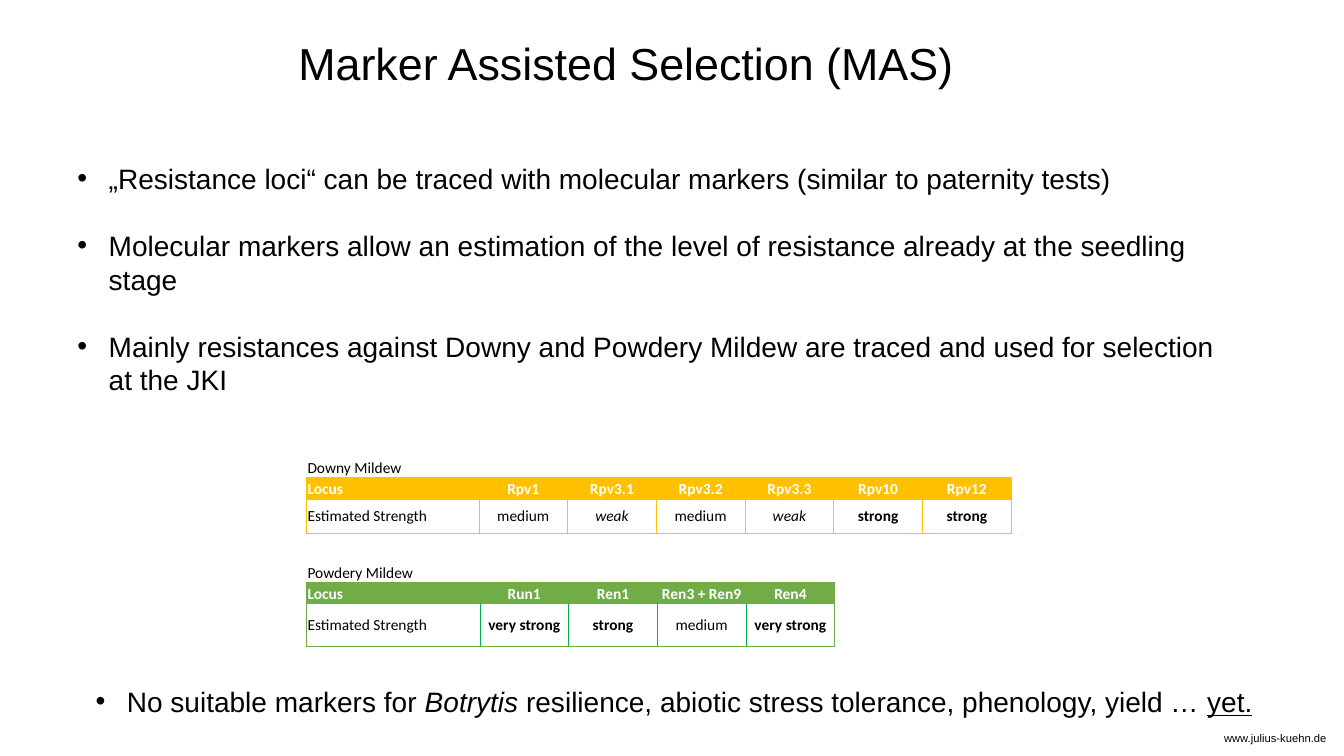
from lxml import etree
from pptx import Presentation
from pptx.dml.color import RGBColor
from pptx.enum.text import MSO_ANCHOR, PP_ALIGN
from pptx.oxml.ns import qn
from pptx.util import Inches, Pt

LEFT, CENTER = PP_ALIGN.LEFT, PP_ALIGN.CENTER
MIDDLE, BOTTOM = MSO_ANCHOR.MIDDLE, MSO_ANCHOR.BOTTOM

BLACK = RGBColor(0x00, 0x00, 0x00)
WHITE = RGBColor(0xFF, 0xFF, 0xFF)
AMBER = RGBColor(0xFF, 0xC0, 0x00)
GREEN = RGBColor(0x70, 0xAD, 0x47)
DEEP_GREEN = RGBColor(0x00, 0xB0, 0x50)

BULLET_INDENT = Inches(0.31)
LOCUS_WIDTH = 0.88
HEADER_HEIGHT = 0.21

LOCI_POINTS = [
    "„Resistance loci“ can be traced with molecular markers (similar to paternity tests)",
    "Molecular markers allow an estimation of the level of resistance already at the seedling stage",
    "Mainly resistances against Downy and Powdery Mildew are traced and used for selection at the JKI",
]
DOWNY = {"Rpv1": "medium", "Rpv3.1": "weak", "Rpv3.2": "medium",
         "Rpv3.3": "weak", "Rpv10": "strong", "Rpv12": "strong"}
POWDERY = {"Run1": "very strong", "Ren1": "strong",
           "Ren3 + Ren9": "medium", "Ren4": "very strong"}


def add_text(paragraph, text, size=20, font="Arial", color=BLACK, align=LEFT,
             bold=False, italic=False, underline=False):
    paragraph.alignment = align
    run = paragraph.add_run()
    run.text = text
    run.font.size = Pt(size)
    run.font.name = font
    run.font.color.rgb = color
    run.font.bold = bold
    run.font.italic = italic
    run.font.underline = underline


def add_box(slide, left, top, width, height):
    box = slide.shapes.add_textbox(Inches(left), Inches(top), Inches(width), Inches(height))
    box.text_frame.word_wrap = True
    return box.text_frame


def make_bullet(paragraph):
    props = paragraph._p.get_or_add_pPr()
    props.set("marL", str(BULLET_INDENT))
    props.set("indent", str(-BULLET_INDENT))
    etree.SubElement(props, qn("a:buFont")).set("typeface", "Arial")
    etree.SubElement(props, qn("a:buChar")).set("char", "•")


def set_borders(cell, **sides):
    """Draw the given sides in their colour and hide the others."""
    props = cell._tc.get_or_add_tcPr()
    for side in ("L", "R", "T", "B"):
        line = etree.SubElement(props, qn(f"a:ln{side}"), w=str(Pt(0.5)))
        if side in sides:
            fill = etree.SubElement(line, qn("a:solidFill"))
            etree.SubElement(fill, qn("a:srgbClr"), val=str(sides[side]))
        else:
            etree.SubElement(line, qn("a:noFill"))


def add_title(slide, left, top, width, height):
    title = add_box(slide, left, top, width, height)
    add_text(title.paragraphs[0], "Marker Assisted Selection (MAS)", size=32, align=CENTER)


def add_loci_points(slide, left, top, width, height):
    frame = add_box(slide, left, top, width, height)
    for i, point in enumerate(LOCI_POINTS):
        paragraph = frame.add_paragraph() if i else frame.paragraphs[0]
        make_bullet(paragraph)
        if i:
            paragraph.space_before = Pt(24)
        add_text(paragraph, point)


def add_resistance_table(slide, left, top, label_width, strength_height,
                         mildew, strengths, accent, divider):
    columns = len(strengths) + 1
    widths = [label_width] + [LOCUS_WIDTH] * len(strengths)
    heights = [HEADER_HEIGHT, HEADER_HEIGHT, strength_height]
    table = slide.shapes.add_table(3, columns, Inches(left), Inches(top),
                                   Inches(sum(widths)), Inches(sum(heights))).table
    table.first_row = table.horz_banding = False
    for column, width in zip(table.columns, widths):
        column.width = Inches(width)
    for row, height in zip(table.rows, heights):
        row.height = Inches(height)

    rows = [[mildew] + [""] * len(strengths),
            ["Locus", *strengths],
            ["Estimated Strength", *strengths.values()]]
    for r, texts in enumerate(rows):
        for c, text in enumerate(texts):
            cell = table.cell(r, c)
            cell.margin_left = cell.margin_right = cell.margin_top = Inches(0.01)
            cell.margin_bottom = 0
            cell.vertical_anchor = MIDDLE if r == 2 else BOTTOM
            if r == 0:
                set_borders(cell, B=accent)
            else:
                inner = divider if r == 2 else accent
                set_borders(cell, T=accent, B=accent,
                            L=inner if c else accent,
                            R=inner if c < columns - 1 else accent)
            if r == 1:
                cell.fill.solid()
                cell.fill.fore_color.rgb = accent
            else:
                cell.fill.background()
            add_text(cell.text_frame.paragraphs[0], text, size=11, font="Calibri",
                     color=WHITE if r == 1 else BLACK,
                     align=CENTER if c else LEFT,
                     bold=r == 1 or text.endswith("strong"),
                     italic=text == "weak")


def add_outlook(slide, left, top, width, height):
    paragraph = add_box(slide, left, top, width, height).paragraphs[0]
    make_bullet(paragraph)
    add_text(paragraph, "No suitable markers for ")
    add_text(paragraph, "Botrytis ", italic=True)
    add_text(paragraph, "resilience, abiotic stress tolerance, phenology, yield … ")
    add_text(paragraph, "yet.", underline=True)


def add_footer(slide, left, top, width, height):
    footer = add_box(slide, left, top, width, height)
    footer.word_wrap = False
    footer.margin_left = footer.margin_right = footer.margin_top = footer.margin_bottom = 0
    add_text(footer.paragraphs[0], "www.julius-kuehn.de", size=8)


def main():
    prs = Presentation()
    prs.slide_width, prs.slide_height = Inches(13.33), Inches(7.5)
    slide = prs.slides.add_slide(prs.slide_layouts[6])

    # Title and statements
    add_title(slide, 0.67, 0.3, 11.08, 1.25)
    add_loci_points(slide, 0.67, 1.55, 11.48, 2.46)

    # Resistance strength per locus
    add_resistance_table(slide, 3.04, 4.43, 1.71, 0.34, "Downy Mildew", DOWNY, AMBER, AMBER)
    add_resistance_table(slide, 3.04, 5.47, 1.72, 0.42, "Powdery Mildew", POWDERY,
                         GREEN, DEEP_GREEN)

    # Outlook and web address
    add_outlook(slide, 0.85, 6.74, 12.11, 0.44)
    add_footer(slide, 12.14, 7.26, 1.05, 0.2)
    prs.save("out.pptx")


if __name__ == "__main__":
    main()
